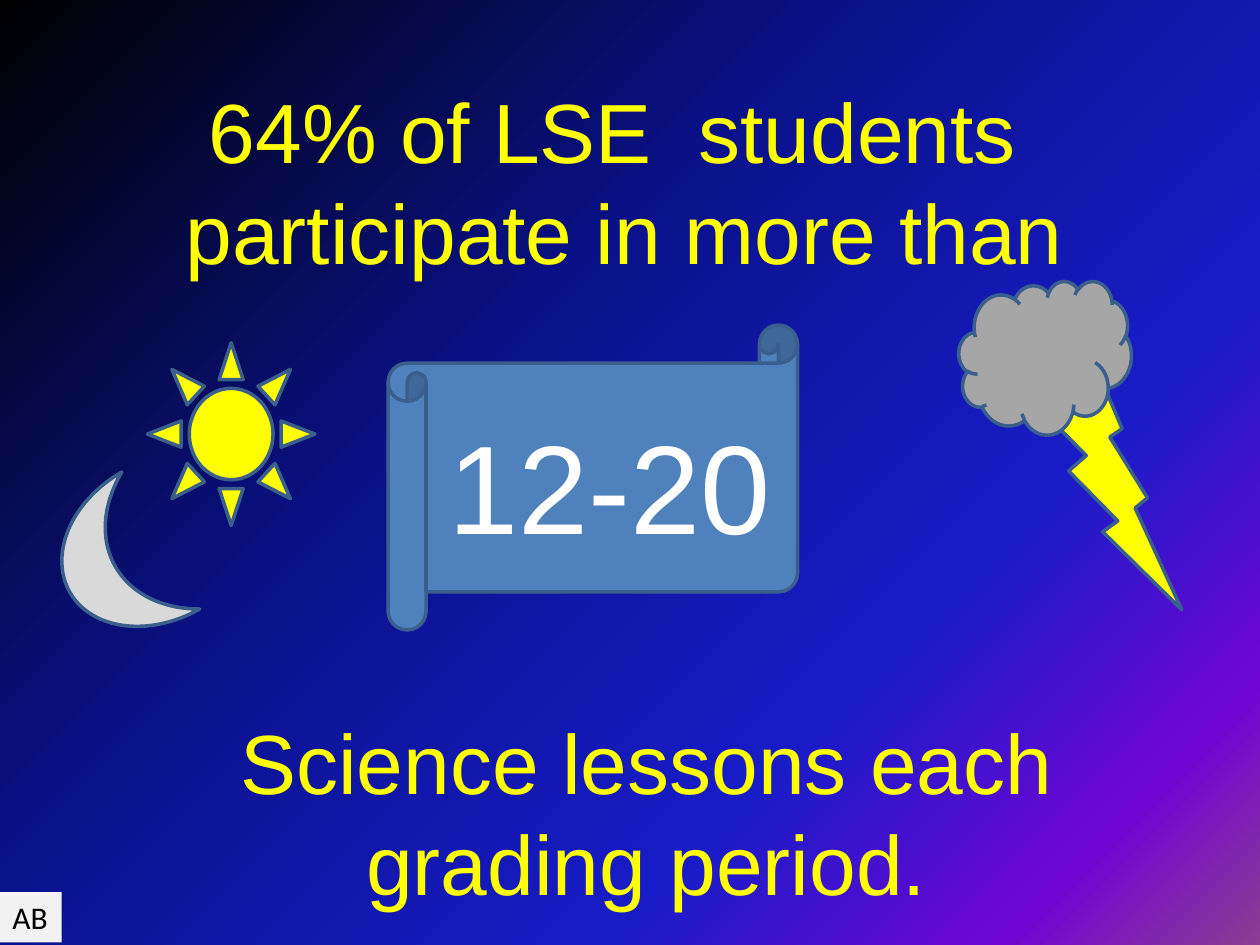
from pptx import Presentation
from pptx.dml.color import RGBColor
from pptx.enum.shapes import MSO_SHAPE
from pptx.enum.text import PP_ALIGN
from pptx.oxml import parse_xml
from pptx.oxml.ns import nsdecls, qn
from pptx.util import Inches, Pt

SCROLL = MSO_SHAPE.HORIZONTAL_SCROLL
BOLT = MSO_SHAPE.LIGHTNING_BOLT
SUN = MSO_SHAPE.SUN
MOON = MSO_SHAPE.MOON
CLOUD = MSO_SHAPE.CLOUD
LEFT = PP_ALIGN.LEFT
CENTER = PP_ALIGN.CENTER

COLORS = {
    "yellow": "FFFF00", "blue": "4F81BD", "edge": "3A5F8C", "white": "FFFFFF",
    "silver": "D9D9D9", "gray": "A6A6A6", "pale": "F2F2F2", "black": "000000",
}
STOPS = [(0, "000000"), (40, "0A128C"), (70, "181CC7"), (88, "7005D4"), (100, "8C3D91")]


def color(name):
    return RGBColor.from_string(COLORS[name])


def add_text(text, box, size=48, font="Arial", ink="yellow", align=CENTER, wrap=True):
    label = slide.shapes.add_textbox(*map(Inches, box))
    frame = label.text_frame
    frame.word_wrap = wrap
    para = frame.paragraphs[0]
    para.alignment = align
    run = para.add_run()
    run.text = text
    run.font.size = Pt(size)
    run.font.name = font
    run.font.color.rgb = color(ink)
    return label


deck = Presentation()
deck.slide_width = Inches(10)
deck.slide_height = Inches(7.5)
slide = deck.slides.add_slide(deck.slide_layouts[6])

back = slide.background.fill
back.gradient()
back.gradient_angle = 315
stops = next(slide.element.iter(qn("a:gsLst")))
for stop in list(stops):
    stops.remove(stop)
for place, shade in STOPS:
    stops.append(parse_xml(
        f'<a:gs {nsdecls("a")} pos="{place * 1000}"><a:srgbClr val="{shade}"/></a:gs>'))

add_text("64% of LSE  students  participate in more than", (1.33, 0.58, 7.25, 1.72))
add_text("Science lessons each grading period.", (1.17, 5.59, 7.92, 1.72))

for kind, box, fill, turn in [
    (SCROLL, (3.08, 2.58, 3.25, 2.42), "blue", 0),
    (BOLT, (8.21, 2.84, 1.17, 2), "yellow", 0),
    (SUN, (1.17, 2.72, 1.33, 1.45), "yellow", 0),
    (MOON, (0.5, 3.87, 0.83, 1.25), "silver", 330.4),
    (CLOUD, (7.61, 2.23, 1.37, 1.22), "gray", 0),
]:
    shape = slide.shapes.add_shape(kind, *map(Inches, box))
    shape.shadow.inherit = False
    shape.rotation = turn
    shape.fill.solid()
    shape.fill.fore_color.rgb = color(fill)
    shape.line.color.rgb = color("edge")
    shape.line.width = Pt(2)

add_text("12-20", (3.38, 3.19, 2.92, 1.31), size=72, ink="white")
tag = add_text("AB", (0, 7.08, 0.49, 0.4), size=18, font="Calibri", ink="black",
               align=LEFT, wrap=False)
tag.fill.solid()
tag.fill.fore_color.rgb = color("pale")

deck.save("out.pptx")
